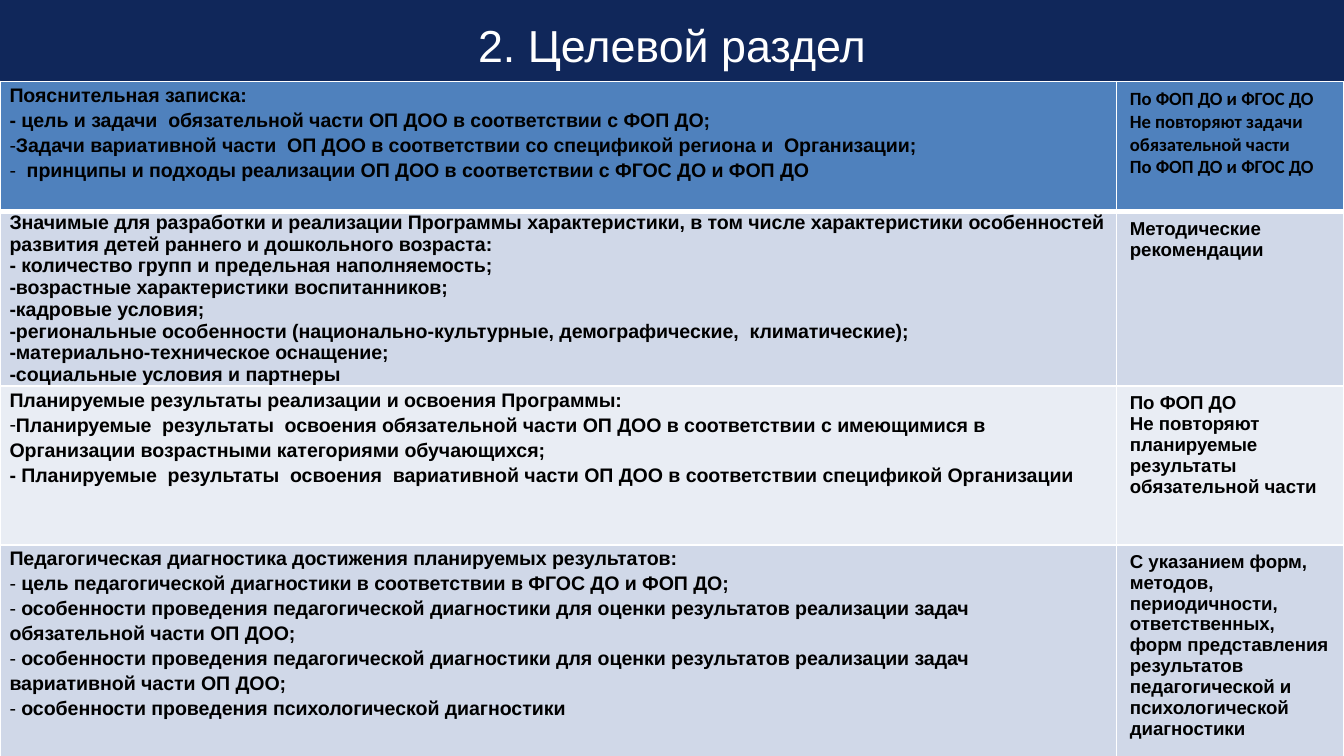
from lxml.etree import SubElement
from pptx import Presentation
from pptx.dml.color import RGBColor
from pptx.enum.text import MSO_ANCHOR, PP_ALIGN
from pptx.oxml import parse_xml
from pptx.oxml.ns import nsdecls, qn
from pptx.util import Cm, Pt

HUES = {"navy": "10275A", "blue": "4F81BD", "mist": "D0D8E8",
        "pale": "E9EDF4", "white": "FFFFFF", "black": "000000"}

# Each line: (bullet, text)
ROWS = [
    (2.46, "blue", 1.15, "Calibri", [
        ("", "Пояснительная записка:"),
        ("", "- цель и задачи  обязательной части ОП ДОО в соответствии с ФОП ДО;"),
        ("-", "Задачи вариативной части  ОП ДОО в соответствии со спецификой региона и  Организации;"),
        ("-", "  принципы и подходы реализации ОП ДОО в соответствии с ФГОС ДО и ФОП ДО"),
    ], [
        ("", "По ФОП ДО и ФГОС ДО"),
        ("", "Не повторяют задачи обязательной части"),
        ("", "По ФОП ДО и ФГОС ДО"),
    ]),
    (3.3, "mist", 1.0, "Arial", [
        ("", "Значимые для разработки и реализации Программы характеристики, в том числе "
             "характеристики особенностей развития детей раннего и дошкольного возраста:"),
        ("", "- количество групп и предельная наполняемость;"),
        ("", "-возрастные характеристики воспитанников;"),
        ("", "-кадровые условия;"),
        ("", "-региональные особенности (национально-культурные, демографические,  климатические);"),
        ("", "-материально-техническое оснащение;"),
        ("", "-социальные условия и партнеры"),
    ], [("", "Методические рекомендации")]),
    (3.0, "pale", 1.15, "Arial", [
        ("", "Планируемые результаты реализации и освоения Программы:"),
        ("-", "Планируемые  результаты  освоения обязательной части ОП ДОО в соответствии "
              "с имеющимися в Организации возрастными категориями обучающихся;"),
        ("", "- Планируемые  результаты  освоения  вариативной части ОП ДОО "
             "в соответствии спецификой Организации"),
    ], [
        ("", "По ФОП ДО"),
        ("", "Не повторяют  планируемые результаты обязательной части"),
    ]),
    (4.88, "mist", 1.15, "Arial", [
        ("", "Педагогическая диагностика достижения планируемых результатов:"),
        ("-", " цель педагогической диагностики в соответствии в ФГОС ДО и ФОП ДО;"),
        ("-", " особенности проведения педагогической диагностики для оценки "
              "результатов реализации задач обязательной части ОП ДОО;"),
        ("-", " особенности проведения педагогической диагностики для оценки "
              "результатов реализации задач  вариативной части ОП ДОО;"),
        ("-", " особенности проведения психологической диагностики"),
    ], [
        ("", "С указанием форм, методов, периодичности, ответственных, форм представления "
             "результатов педагогической и психологической диагностики"),
    ]),
]


def add_run(par, text, face, size, hue, bold):
    run = par.add_run()
    run.text = text
    run.font.name = face
    run.font.size = Pt(size)
    run.font.bold = bold
    run.font.color.rgb = RGBColor.from_string(HUES[hue])


def fill_cell(cell, lines, face, size, space, hue, row):
    cell.fill.solid()
    cell.fill.fore_color.rgb = RGBColor.from_string(HUES[hue])
    props = cell._tc.get_or_add_tcPr()
    for spot, side in enumerate("LRTB"):
        thick = (row, side) in [(0, "B"), (1, "T")]
        props.insert(spot, parse_xml(
            f'<a:ln{side} {nsdecls("a")} w="{Pt(3 if thick else 1)}"><a:solidFill>'
            f'<a:srgbClr val="{HUES["white"]}"/></a:solidFill></a:ln{side}>'))
    frame = cell.text_frame
    for spot, (mark, text) in enumerate(lines):
        par = frame.add_paragraph() if spot else frame.paragraphs[0]
        par.line_spacing = space
        if mark:
            form = par._p.get_or_add_pPr()
            form.set("marL", "0")
            form.set("indent", "0")
            SubElement(form, qn("a:buFont"), typeface="Arial")
            SubElement(form, qn("a:buChar"), char=mark)
        add_run(par, text, face, size, "black", True)


deck = Presentation()
deck.slide_width, deck.slide_height = Cm(25.4), Cm(14.29)
slide = deck.slides.add_slide(deck.slide_layouts[5])
slide.background.fill.solid()
slide.background.fill.fore_color.rgb = RGBColor.from_string(HUES["navy"])

title = slide.shapes.title
title.left, title.top, title.width, title.height = Cm(1.9), Cm(-0.46), Cm(21.6), Cm(2.6)
title.text_frame.vertical_anchor = MSO_ANCHOR.MIDDLE
head = title.text_frame.paragraphs[0]
head.alignment = PP_ALIGN.CENTER
add_run(head, "2. Целевой раздел", "Arial", 24, "white", False)

tall = sum(row[0] for row in ROWS)
table = slide.shapes.add_table(len(ROWS), 2, 0, Cm(1.54), Cm(25.4), Cm(tall)).table
table.columns[0].width, table.columns[1].width = Cm(21.1), Cm(4.3)
for num, (high, hue, space, face, left, right) in enumerate(ROWS):
    table.rows[num].height = Cm(high)
    main, side = table.cell(num, 0), table.cell(num, 1)
    main.margin_left = main.margin_right = Cm(0.18)
    main.margin_top = main.margin_bottom = 0
    fill_cell(main, left, "Arial", 10.5, space, hue, num)
    fill_cell(side, right, face, 10, 1.0, hue, num)

deck.save("out.pptx")
